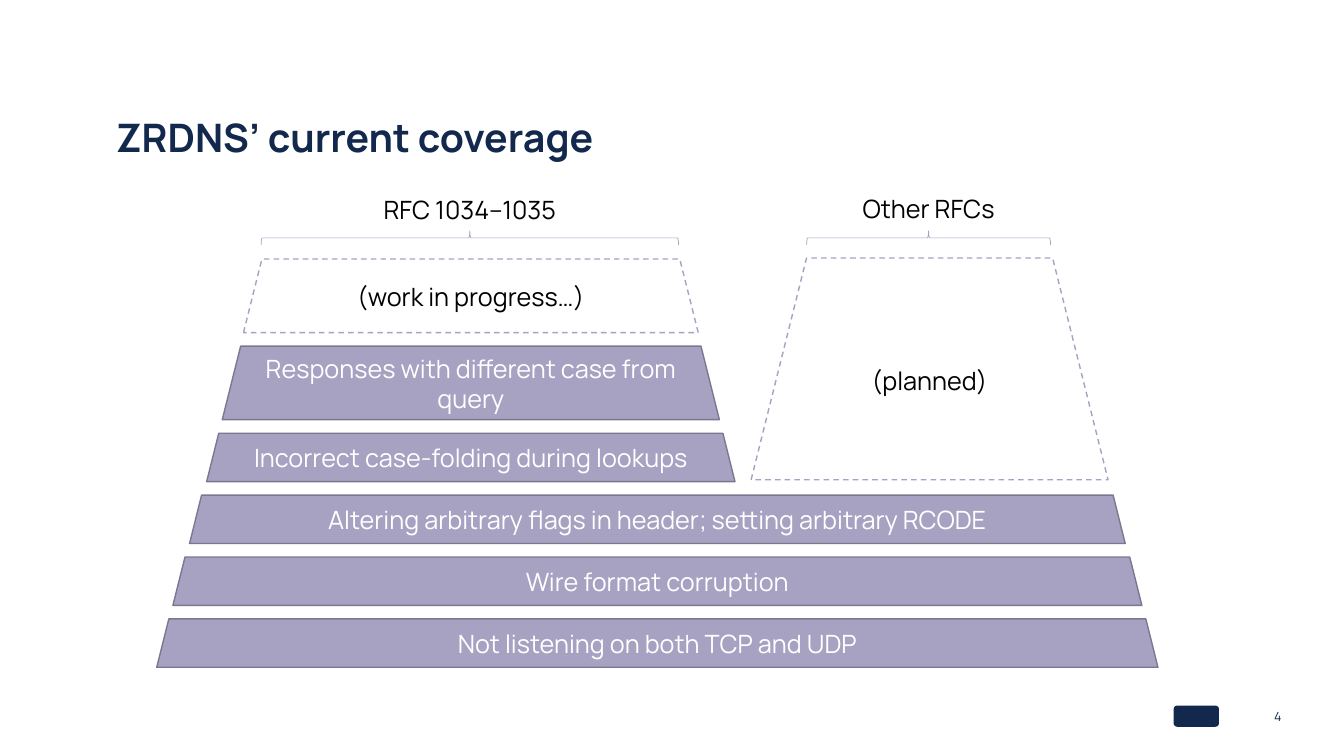
from pptx import Presentation
from pptx.dml.color import RGBColor
from pptx.enum.dml import MSO_LINE_DASH_STYLE as Dash
from pptx.enum.shapes import MSO_SHAPE as Shape
from pptx.enum.text import MSO_ANCHOR as Anchor, PP_ALIGN as Align
from pptx.util import Inches, Pt

COLORS = {
    "navy": "12284C",
    "lilac": "A7A1C2",
    "edge": "7C7790",
    "white": "FFFFFF",
    "black": "000000",
}
FONT = "Manrope"
STACK_TOP, STACK_BOTTOM = 2.57, 6.62
FULL_CENTER, CORE_CENTER = 6.52, 4.67

# Layers from top to bottom: text, centre, width, height, finished
LAYERS = [
    ("(work in progress…)", CORE_CENTER, 4.51, 0.73, False),
    ("Responses with different case from query", CORE_CENTER, 4.93, 0.73, True),
    ("Incorrect case-folding during lookups", CORE_CENTER, 5.24, 0.48, True),
    ("Altering arbitrary flags in header; setting arbitrary RCODE",
     FULL_CENTER, 9.28, 0.48, True),
    ("Wire format corruption", FULL_CENTER, 9.61, 0.48, True),
    ("Not listening on both TCP and UDP", FULL_CENTER, 9.93, 0.48, True),
]


def color(name):
    return RGBColor.from_string(COLORS[name])


def write(shape, text, size, color_name, align, anchor, bold=False):
    frame = shape.text_frame
    frame.word_wrap = True
    frame.vertical_anchor = anchor
    paragraph = frame.paragraphs[0]
    paragraph.alignment = align
    run = paragraph.add_run()
    run.text = text
    run.font.name = FONT
    run.font.size = Pt(size)
    run.font.bold = bold
    run.font.color.rgb = color(color_name)
    return paragraph


def add_text(slide, box, *style, **options):
    text_box = slide.shapes.add_textbox(*map(Inches, box))
    return write(text_box, *style, **options)


def add_layer(slide, box, text, finished):
    """Draw a trapezoid: solid if finished, dashed if still to come."""
    shape = slide.shapes.add_shape(Shape.TRAPEZOID, *map(Inches, box))
    shape.shadow.inherit = False
    shape.fill.solid()
    shape.fill.fore_color.rgb = color("lilac" if finished else "white")
    shape.line.color.rgb = color("edge" if finished else "lilac")
    shape.line.width = Pt(1)
    if not finished:
        shape.line.dash_style = Dash.DASH
    write(shape, text, 18, "white" if finished else "black",
          Align.CENTER, Anchor.MIDDLE)


def add_pyramid(slide, top, bottom):
    """Stack the layers with equal gaps between top and bottom."""
    total = sum(height for _, _, _, height, _ in LAYERS)
    gap = (bottom - top - total) / (len(LAYERS) - 1)
    for text, center, width, height, finished in LAYERS:
        add_layer(slide, (center - width / 2, top, width, height), text, finished)
        top += height + gap


def add_brace_heading(slide, box, text):
    """Place a heading over an upward brace that spans the box."""
    left, top, width, height = box
    depth = 0.14
    center = left + width / 2
    middle = top + height - depth / 2
    brace = slide.shapes.add_shape(
        Shape.RIGHT_BRACE, Inches(center - depth / 2), Inches(middle - width / 2),
        Inches(depth), Inches(width))
    brace.rotation = 270
    brace.shadow.inherit = False
    brace.fill.background()
    brace.line.color.rgb = color("lilac")
    brace.line.width = Pt(0.5)
    add_text(slide, (center - 1.1, top, 2.2, 0.4), text, 18, "black",
             Align.CENTER, Anchor.TOP)


def add_title(slide, box):
    paragraph = add_text(slide, box, "ZRDNS’ current coverage", 28, "navy",
                         Align.LEFT, Anchor.BOTTOM, bold=True)
    paragraph.line_spacing = 0.9


def add_footer(slide, box):
    left, top, width, height = box
    mark = slide.shapes.add_shape(Shape.ROUNDED_RECTANGLE, Inches(left),
                                  Inches(top + 0.09), Inches(0.45), Inches(0.21))
    mark.shadow.inherit = False
    mark.fill.solid()
    mark.fill.fore_color.rgb = color("navy")
    mark.line.fill.background()
    add_text(slide, (left + width - 0.7, top, 0.7, height), "4", 9, "navy",
             Align.RIGHT, Anchor.MIDDLE)


def main():
    presentation = Presentation()
    presentation.slide_width = Inches(13.33)
    presentation.slide_height = Inches(7.5)
    slide = presentation.slides.add_slide(presentation.slide_layouts[6])
    add_title(slide, (1.05, 0.59, 11.5, 1.06))
    add_pyramid(slide, STACK_TOP, STACK_BOTTOM)
    add_layer(slide, (7.45, 2.56, 3.54, 2.2), "(planned)", False)
    add_brace_heading(slide, (2.59, 1.88, 4.14, 0.55), "RFC 1034–1035")
    add_brace_heading(slide, (8.0, 1.87, 2.42, 0.56), "Other RFCs")
    add_footer(slide, (11.64, 6.91, 1.17, 0.4))
    presentation.save("out.pptx")


if __name__ == "__main__":
    main()
